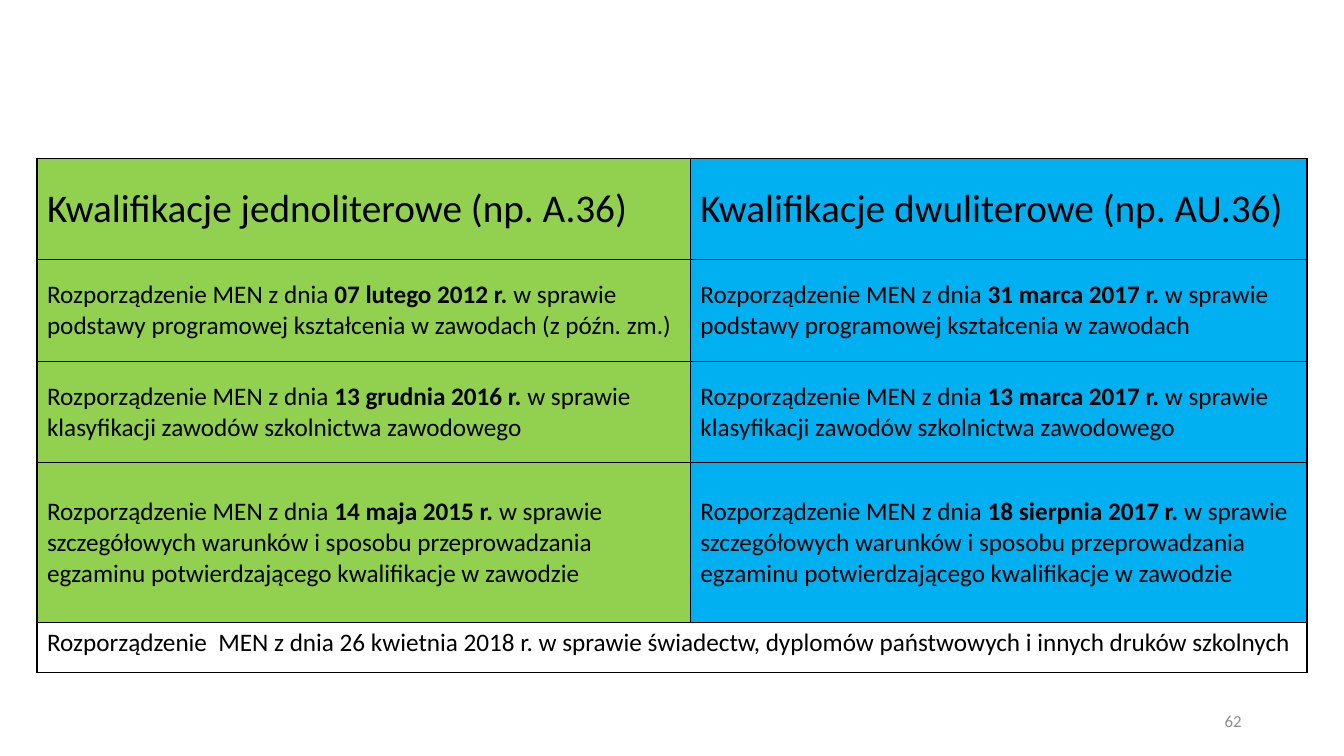
from dataclasses import dataclass

from lxml import etree
from pptx import Presentation
from pptx.dml.color import RGBColor
from pptx.enum.text import MSO_ANCHOR, PP_ALIGN
from pptx.oxml.ns import qn
from pptx.util import Pt

MIDDLE, TOP = MSO_ANCHOR.MIDDLE, MSO_ANCHOR.TOP
RIGHT = PP_ALIGN.RIGHT


@dataclass(frozen=True)
class Theme:
    font: str = "Calibri"
    ink: str = "000000"
    grey: str = "8C8C8C"
    green: str = "92D050"
    blue: str = "00B0F0"
    head: float = 28
    body: float = 18
    small: float = 12
    line: float = 1


@dataclass(frozen=True)
class Act:
    """A legal act: its date and what it deals with."""
    date: str
    topic: str


THEME = Theme()
WIDTHS = (466.7, 440.5)
HEIGHTS = (72.5, 72.5, 72.5, 114.4, 35.3)
FILLS = (THEME.green, THEME.blue)

# Wording
LEAD = "Rozporządzenie MEN z dnia "
BASE = "podstawy programowej kształcenia w zawodach"
CLASSES = "klasyfikacji zawodów szkolnictwa zawodowego"
EXAMS = ("szczegółowych warunków i sposobu przeprowadzania "
         "egzaminu potwierdzającego kwalifikacje w zawodzie")
HEADS = ("Kwalifikacje jednoliterowe (np. A.36)",
         "Kwalifikacje dwuliterowe (np. AU.36)")
ACTS = (
    (Act("07 lutego 2012 r. ", BASE + " (z późn. zm.)"),
     Act("31 marca 2017 r. ", BASE)),
    (Act("13 grudnia 2016 r. ", CLASSES), Act("13 marca 2017 r. ", CLASSES)),
    (Act("14 maja 2015 r. ", EXAMS), Act("18 sierpnia 2017 r. ", EXAMS)),
)
SHARED = ("Rozporządzenie  MEN z dnia 26 kwietnia 2018 r. w sprawie "
          "świadectw, dyplomów państwowych i innych druków szkolnych")


def style(runs, size: float, tint: str = THEME.ink) -> None:
    for run in runs:
        run.font.name = THEME.font
        run.font.size = Pt(size)
        run.font.color.rgb = RGBColor.from_string(tint)


def frame(cell) -> None:
    """Draw a thin line on all four sides of a cell."""
    props = cell._tc.get_or_add_tcPr()
    for side in ("a:lnL", "a:lnR", "a:lnT", "a:lnB"):
        line = etree.SubElement(props, qn(side), w=str(Pt(THEME.line)))
        fill = etree.SubElement(line, qn("a:solidFill"))
        etree.SubElement(fill, qn("a:srgbClr"), val=THEME.ink)


def write(cell, text: str, size: float, anchor=MIDDLE) -> None:
    cell.text_frame.text = text
    cell.vertical_anchor = anchor
    style(cell.text_frame.paragraphs[0].runs, size)


def cite(cell, act: Act) -> None:
    """Write an act with its date in bold."""
    para = cell.text_frame.paragraphs[0]
    for text in (LEAD, act.date, "w sprawie " + act.topic):
        run = para.add_run()
        run.text = text
        run.font.bold = text == act.date
    cell.vertical_anchor = MIDDLE
    style(para.runs, THEME.body)


def build_table(slide) -> None:
    table = slide.shapes.add_table(
        len(HEIGHTS), len(WIDTHS), Pt(26.4), Pt(113.1),
        Pt(sum(WIDTHS)), Pt(sum(HEIGHTS))).table
    table.first_row = table.horz_banding = False
    for col, width in zip(table.columns, WIDTHS):
        col.width = Pt(width)
    for row, height in zip(table.rows, HEIGHTS):
        row.height = Pt(height)

    # Lines first, then fills
    last = len(HEIGHTS) - 1
    for r in range(len(HEIGHTS)):
        for c, tint in enumerate(FILLS):
            cell = table.cell(r, c)
            frame(cell)
            if r == last:
                cell.fill.background()
            else:
                cell.fill.solid()
                cell.fill.fore_color.rgb = RGBColor.from_string(tint)

    # Text
    for c, head in enumerate(HEADS):
        write(table.cell(0, c), head, THEME.head)
    for r, pair in enumerate(ACTS, 1):
        for c, act in enumerate(pair):
            cite(table.cell(r, c), act)
    foot = table.cell(last, 0)
    foot.merge(table.cell(last, 1))
    write(foot, SHARED, THEME.body, TOP)


def add_page(slide, text: str) -> None:
    """Put the page number at the bottom right."""
    box = slide.shapes.add_textbox(Pt(678), Pt(500.5), Pt(216), Pt(28.8))
    box.text_frame.word_wrap = True
    box.text_frame.vertical_anchor = MIDDLE
    box.text_frame.text = text
    para = box.text_frame.paragraphs[0]
    para.alignment = RIGHT
    style(para.runs, THEME.small, THEME.grey)


def main() -> None:
    deck = Presentation()
    deck.slide_width, deck.slide_height = Pt(960), Pt(540)
    slide = deck.slides.add_slide(deck.slide_layouts[6])
    build_table(slide)
    add_page(slide, "62")
    deck.save("out.pptx")


if __name__ == "__main__":
    main()
